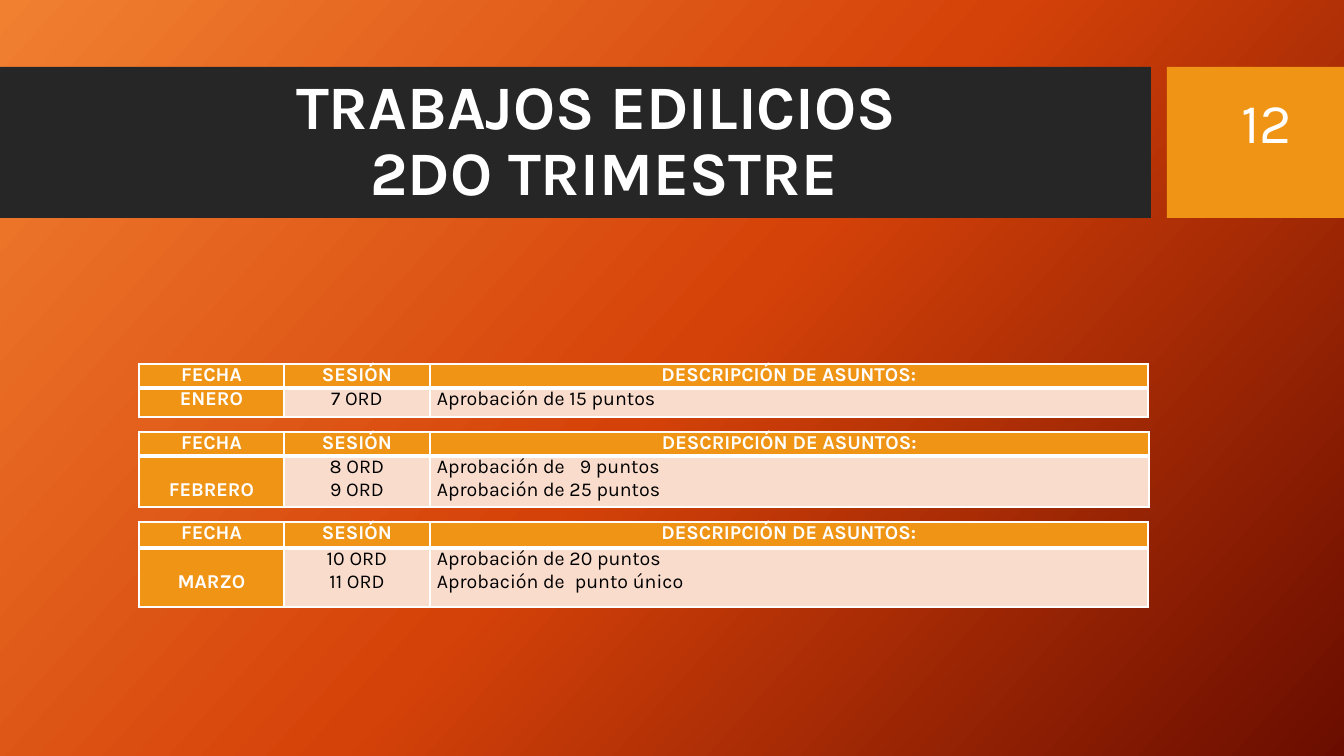
from copy import deepcopy

from lxml.etree import SubElement
from pptx import Presentation
from pptx.dml.color import RGBColor
from pptx.enum.shapes import MSO_SHAPE
from pptx.enum.text import MSO_ANCHOR, MSO_AUTO_SIZE, PP_ALIGN
from pptx.oxml.ns import qn
from pptx.util import Pt

SCALE = 12192000 / 1344  # EMU in one px
COLORS = {
    "white": "FFFFFF", "black": "000000", "band": "262626",
    "orange": "F09415", "peach": "F9DCCC",
    "glow": "F18031", "flame": "D54209", "ember": "6A0D00",
}
HEADINGS = ["FECHA", "SESIÓN", "DESCRIPCIÓN DE ASUNTOS:"]
CENTER, JUSTIFY = PP_ALIGN.CENTER, PP_ALIGN.JUSTIFY


def px(length):
    return round(length * SCALE)


def rgb(name):
    return RGBColor.from_string(COLORS[name])


class SlideBuilder:
    font_name = "Karla"

    def __init__(self, presentation):
        layout = presentation.slide_layouts.get_by_name("Title Only")
        self.slide = presentation.slides.add_slide(layout)

    def background(self, colors, angle):
        fill = self.slide.background.fill
        fill.gradient()
        fill.gradient_angle = 360 - angle
        stop_list = self.slide.element.find(".//" + qn("a:gsLst"))
        stop_list.insert(1, deepcopy(stop_list[0]))
        for index, (stop, color) in enumerate(zip(fill.gradient_stops, colors)):
            stop.position = index / (len(colors) - 1)
            stop.color.rgb = rgb(color)

    def rectangle(self, left, top, width, height, color):
        shape = self.slide.shapes.add_shape(
            MSO_SHAPE.RECTANGLE, px(left), px(top), px(width), px(height))
        shape.shadow.inherit = False
        shape.fill.solid()
        shape.fill.fore_color.rgb = rgb(color)
        shape.line.fill.background()

    def run(self, paragraph, text, size, color="white", bold=False):
        run = paragraph.add_run()
        run.text = text
        run.font.name = self.font_name
        run.font.size = Pt(size)
        run.font.bold = bold
        run.font.color.rgb = rgb(color)

    def title(self, left, top, width, height, lines, size):
        title = self.slide.shapes.title
        # Bring the title in front of its band
        self.slide.shapes.element.append(title.element)
        title.left, title.top = px(left), px(top)
        title.width, title.height = px(width), px(height)
        frame = title.text_frame
        frame.word_wrap = True
        frame.auto_size = MSO_AUTO_SIZE.NONE
        frame.vertical_anchor = MSO_ANCHOR.MIDDLE
        paragraph = frame.paragraphs[0]
        paragraph.alignment = CENTER
        paragraph.line_spacing = 0.9
        for index, line in enumerate(lines):
            if index:
                paragraph.add_line_break()
            self.run(paragraph, line, size, bold=True)

    def label(self, left, top, width, height, text, size):
        box = self.slide.shapes.add_textbox(px(left), px(top), px(width), px(height))
        box.text_frame.word_wrap = False
        paragraph = box.text_frame.paragraphs[0]
        paragraph.alignment = CENTER
        self.run(paragraph, text, size)

    def borders(self, cell, top, bottom):
        properties = cell._tc.get_or_add_tcPr()
        for side, points in (("L", 1), ("R", 1), ("T", top), ("B", bottom)):
            line = SubElement(properties, qn("a:ln" + side), w=str(Pt(points)))
            fill = SubElement(line, qn("a:solidFill"))
            SubElement(fill, qn("a:srgbClr"), val=COLORS["white"])

    def cell(self, cell, lines, fill, color, bold, alignment, top_line, bottom_line,
             space_above=0, tab_stop=None):
        self.borders(cell, top_line, bottom_line)
        cell.fill.solid()
        cell.fill.fore_color.rgb = rgb(fill)
        cell.margin_left = cell.margin_right = px(7)
        cell.margin_top, cell.margin_bottom = px(space_above), 0
        for index, line in enumerate(lines):
            frame = cell.text_frame
            paragraph = frame.add_paragraph() if index else frame.paragraphs[0]
            paragraph.alignment = alignment
            if "\t" in line:
                tabs = SubElement(paragraph._p.get_or_add_pPr(), qn("a:tabLst"))
                SubElement(tabs, qn("a:tab"), pos=str(px(tab_stop)), algn="l")
            self.run(paragraph, line, 14, color, bold)

    def session_table(self, top, row_heights, month, sessions, subjects,
                      last_width, month_offset=0, tab_stop=None):
        widths = [145, 146, last_width]
        table = self.slide.shapes.add_table(
            2, 3, px(139), px(top), px(sum(widths)), px(sum(row_heights))).table
        for column, width in zip(table.columns, widths):
            column.width = px(width)
        for row, height in zip(table.rows, row_heights):
            row.height = px(height)
        for index, heading in enumerate(HEADINGS):
            self.cell(table.cell(0, index), [heading], "orange", "white", True,
                      CENTER, 1, 3)
        self.cell(table.cell(1, 0), [month], "orange", "white", True,
                  CENTER, 3, 1, month_offset)
        self.cell(table.cell(1, 1), sessions, "peach", "black", False, CENTER, 3, 1)
        self.cell(table.cell(1, 2), subjects, "peach", "black", False, JUSTIFY, 3, 1,
                  tab_stop=tab_stop)


def main():
    presentation = Presentation()
    presentation.slide_width, presentation.slide_height = px(1344), px(756)
    builder = SlideBuilder(presentation)

    # Background and heading band
    builder.background(["glow", "flame", "ember"], 42)
    builder.rectangle(0, 67, 1151, 151, "band")
    builder.rectangle(1167, 67, 177, 151, "orange")
    builder.title(75, 83, 1059, 119, ["TRABAJOS EDILICIOS ", "2DO TRIMESTRE"], 44.1)
    builder.label(1227, 83, 80, 78, "12", 40)

    # One table for each month
    builder.session_table(364, [24, 29], "ENERO", ["7 ORD"],
                          ["Aprobación de 15 puntos"], 718)
    builder.session_table(432, [24, 51], "FEBRERO", ["8 ORD", "9 ORD"],
                          ["Aprobación de\t9 puntos", "Aprobación de 25 puntos"],
                          719, month_offset=23, tab_stop=143)
    builder.session_table(522, [26, 59], "MARZO", ["10 ORD", "11 ORD"],
                          ["Aprobación de 20 puntos", "Aprobación de\tpunto único"],
                          718, month_offset=23, tab_stop=138)

    presentation.save("out.pptx")


if __name__ == "__main__":
    main()
